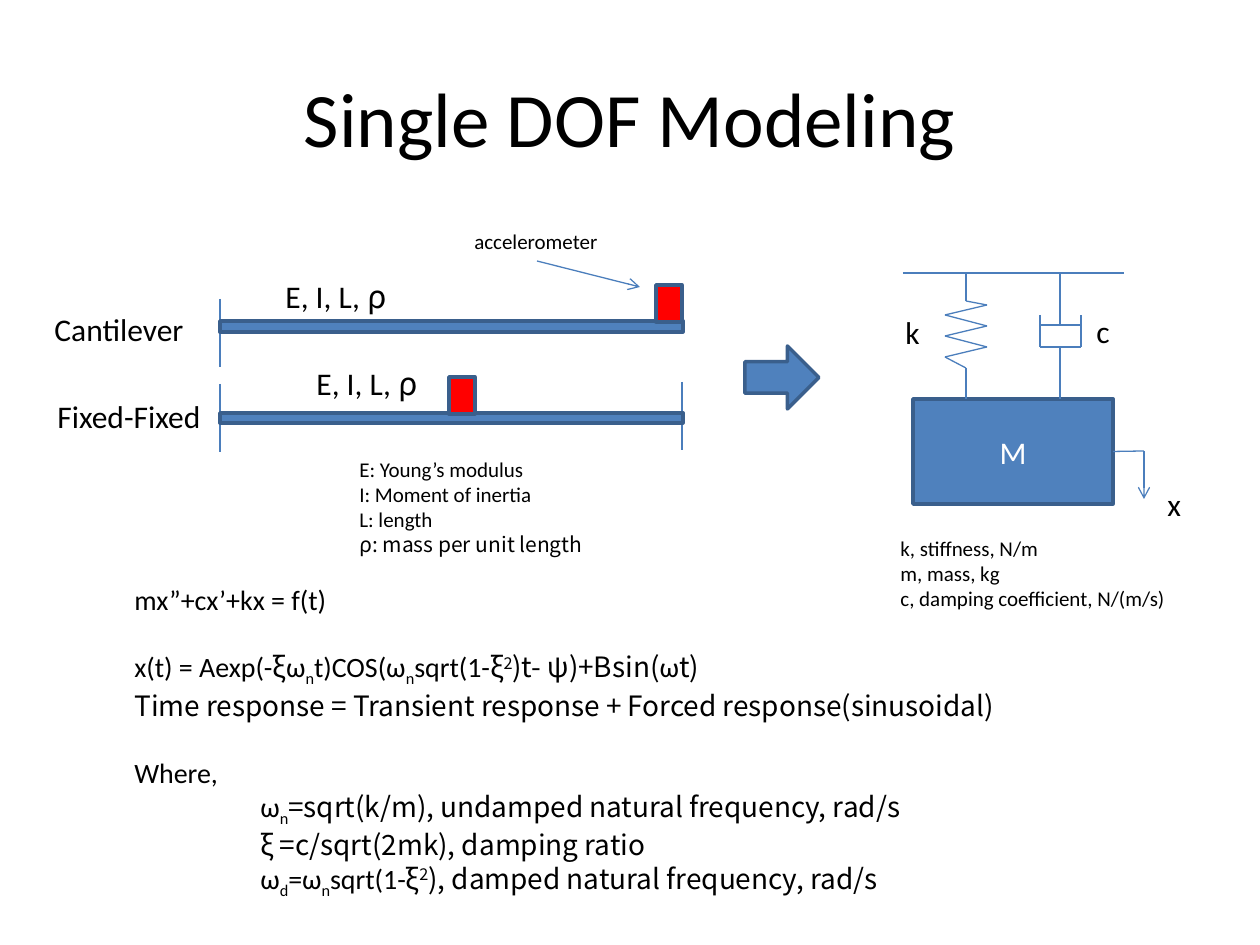
"""Build the slide on single degree-of-freedom modeling of beams."""
from dataclasses import dataclass
from itertools import pairwise

from lxml.etree import SubElement
from pptx import Presentation
from pptx.dml.color import RGBColor as RGB
from pptx.enum.shapes import MSO_CONNECTOR as LINK, MSO_SHAPE as KIND
from pptx.enum.text import MSO_ANCHOR as ANCHOR, MSO_AUTO_SIZE as AUTO, PP_ALIGN as ALIGN
from pptx.oxml.ns import qn
from pptx.util import Pt


@dataclass(frozen=True)
class Theme:
    ink: str = "000000"
    pale: str = "FFFFFF"
    blue: str = "4F81BD"
    edge: str = "3A5F8C"
    wire: str = "4B7EBC"
    red: str = "FF0000"
    font: str = "Calibri"
    greek: str = "Noto Sans CJK KR"
    title: int = 44
    label: int = 18
    body: int = 16
    note: int = 12


T = Theme()
EMU = 914400 // 126
WIDE, HIGH = 1260, 945
GAP = 19.5
INDENT = 126

G, SUB, SUP = "greek", "sub", "sup"
BEAM = [("E, I, L, ",), ("ρ", G)]
LABELS = [
    ((273, 271, 135, 50), BEAM),
    ((304, 358, 135, 50), BEAM),
    ((893, 307, 40, 50), "k"),
    ((1084, 306, 40, 50), "c"),
    ((1155, 479, 39, 50), "x"),
    ((42, 304, 156, 50), "Cantilever"),
    ((45, 391, 170, 50), "Fixed-Fixed"),
]
UNITS = ["k, stiffness, N/m", "m, mass, kg", "c, damping coefficient, N/(m/s)"]
TERMS = ["E: Young’s modulus", "I: Moment of inertia", "L: length",
         [("ρ: mass per unit length", G)]]
MATH = [
    "mx”+cx’+kx = f(t)",
    [("x(t) = Aexp(-",), ("ξ", G), ("ω",), ("n", SUB), ("t)COS(ω",), ("n", SUB),
     ("sqrt(1-",), ("ξ", G), ("2", G, SUP), (")t- ψ)+Bsin(", G), ("ω",), ("t)", G)],
    [("Time response = Transient response + Forced response(sinusoidal)", G)],
    "Where,",
    [("ω",), ("n", SUB), ("=sqrt(k/m), undamped natural frequency, rad/s", G)],
    [("ξ =c/sqrt(2mk), damping ratio", G)],
    [("ω",), ("d", SUB), ("=ω",), ("n", SUB), ("sqrt(1-",), ("ξ", G), ("2", G, SUP),
     ("), damped natural frequency, rad/s", G)],
]
SPACED = (1, 3)
INSET = (4, 5, 6)

BARS = [(220, 321, 463, 11), (220, 413, 463, 10)]
BLOCKS = [(449, 377, 26, 37), (656, 285, 26, 37)]
WALLS = [(220, 299), (220, 384), (682, 382)]
WALL = 68
ROOF, MASS = 273, (913, 399, 200, 105)
LEFT, MID, RIGHT = 945, 966, 987
COIL = [(LEFT if i % 2 else RIGHT, round(305 + 10.4 * i)) for i in range(6)]
SPRING = [(MID, ROOF), (MID, 301), *COIL, (MID, 368), (MID, MASS[1])]
DAMPER = [
    [(1040, 315), (1040, 347), (1081, 347), (1081, 315)],
    [(1040, 325), (1081, 325)],
    [(1060, 347), (1060, MASS[1])],
    [(1060, ROOF), (1060, 325)],
]

deck = Presentation()
deck.slide_width, deck.slide_height = WIDE * EMU, HIGH * EMU
slide = deck.slides.add_slide(deck.slide_layouts[6])
shapes = slide.shapes


def scale(nums):
    return [n * EMU for n in nums]


def write(frame, paras, size=T.label, color=T.ink, align=ALIGN.LEFT,
          anchor=ANCHOR.TOP, wrap=False, grow=True, spaced=(), inset=()):
    frame.word_wrap = wrap
    frame.auto_size = AUTO.SHAPE_TO_FIT_TEXT if grow else AUTO.NONE
    frame.vertical_anchor = anchor
    for i, runs in enumerate(paras):
        para = frame.paragraphs[0] if i == 0 else frame.add_paragraph()
        para.alignment = align
        if i in spaced:
            para.space_before = Pt(GAP)
        if i in inset:
            para._p.get_or_add_pPr().set("marL", str(INDENT * EMU))
        for text, *marks in [(runs,)] if isinstance(runs, str) else runs:
            run = para.add_run()
            run.text = text
            font = run.font
            font.name = T.greek if G in marks else T.font
            font.size = Pt(size)
            font.color.rgb = RGB.from_string(color)
            if SUB in marks or SUP in marks:
                font._element.set("baseline", "-25000" if SUB in marks else "30000")


def label(box, paras, **style):
    write(shapes.add_textbox(*scale(box)).text_frame, paras, **style)


def solid(box, kind=KIND.RECTANGLE, fill=T.blue):
    shape = shapes.add_shape(kind, *scale(box))
    shape.shadow.inherit = False
    shape.fill.solid()
    shape.fill.fore_color.rgb = RGB.from_string(fill)
    shape.line.color.rgb = RGB.from_string(T.edge)
    shape.line.width = Pt(2)
    return shape


def wire(start, end, arrow=False):
    link = shapes.add_connector(LINK.STRAIGHT, *scale((*start, *end)))
    link.line.color.rgb = RGB.from_string(T.wire)
    link.line.width = Pt(0.75)
    if arrow:
        SubElement(link.line._get_or_add_ln(), qn("a:tailEnd"), type="arrow")
    SubElement(link._element.spPr, qn("a:effectLst"))
    return link


def chain(points):
    for start, end in pairwise(points):
        wire(start, end)


label((63, 38, 1134, 158), ["Single DOF Modeling"], size=T.title,
      align=ALIGN.CENTER, anchor=ANCHOR.MIDDLE, wrap=True, grow=False)
for x, y in WALLS:
    wire((x, y), (x, y + WALL))
for bar in BARS:
    solid(bar)
for block in BLOCKS:
    solid(block, fill=T.red)
solid((745, 346, 74, 63), kind=KIND.RIGHT_ARROW)

mass = solid(MASS)
write(mass.text_frame, ["M"], color=T.pale, align=ALIGN.CENTER,
      anchor=ANCHOR.MIDDLE, wrap=True, grow=False)
for points in [SPRING, *DAMPER, [(903, ROOF), (1124, ROOF)]]:
    chain(points)
wire((1113, 451), (1144, 451)).begin_connect(mass, 3)
wire((1144, 451), (1144, 499), arrow=True)
wire((537, 261), (640, 287), arrow=True)

for box, text in LABELS:
    label(box, [text])
label((462, 222, 150, 38), ["accelerometer"], size=T.note)
label((888, 529, 345, 90), UNITS, size=T.note, wrap=True)
label((347, 450, 256, 115), TERMS, size=T.note)
label((122, 576, 887, 318), MATH, size=T.body, spaced=SPACED, inset=INSET)

deck.save("out.pptx")
